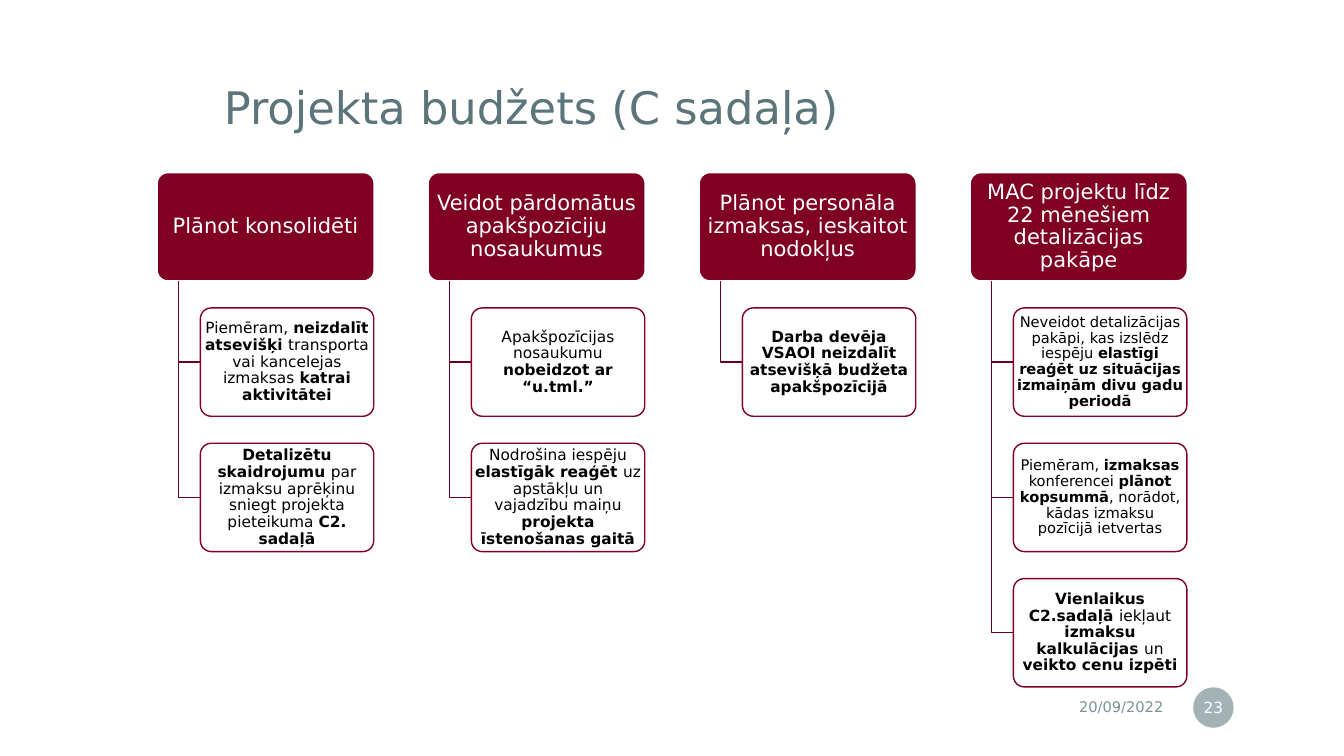
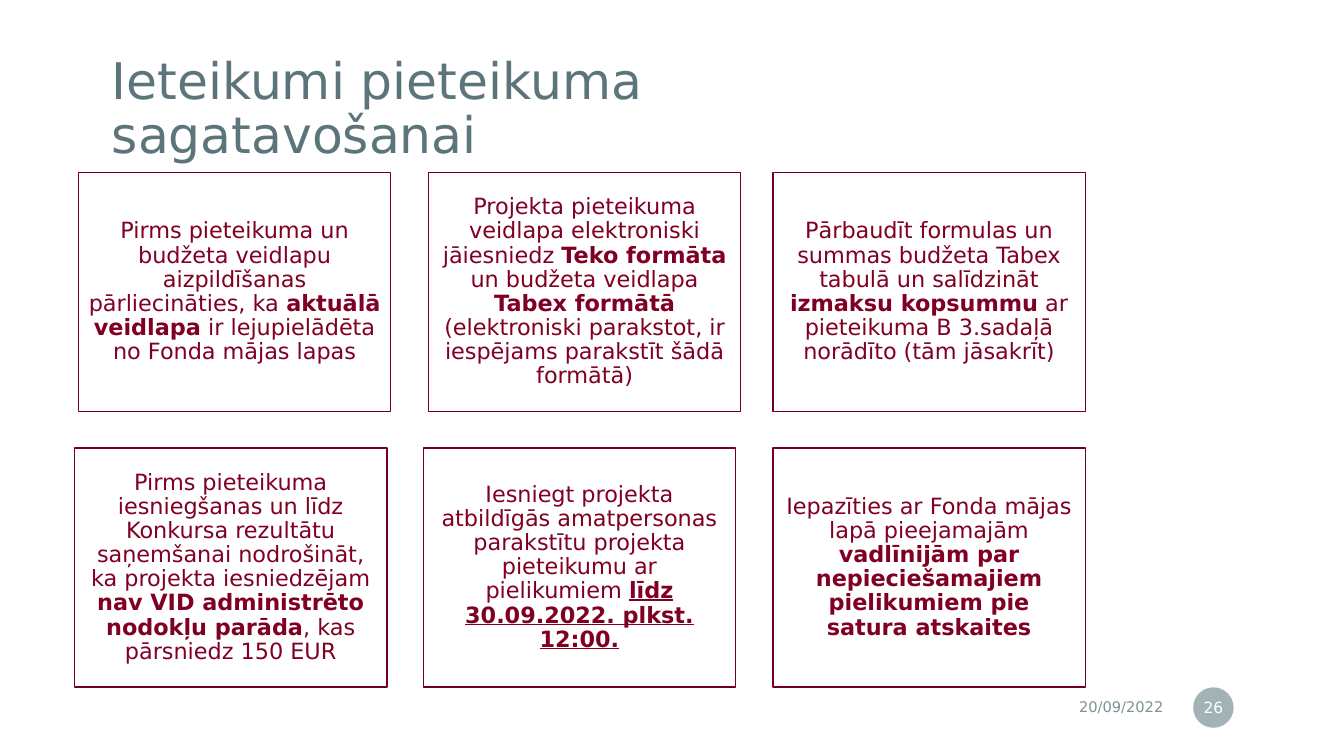
from pptx import Presentation
from pptx.dml.color import RGBColor
from pptx.enum.shapes import MSO_SHAPE as SHAPE
from pptx.enum.text import MSO_ANCHOR as ANCHOR, MSO_AUTO_SIZE, PP_ALIGN as ALIGN
from pptx.oxml.ns import qn
from pptx.util import Cm, Pt
from lxml import etree

FONT = "DejaVu Sans"
WHITE = RGBColor(0xFF, 0xFF, 0xFF)
BLACK = RGBColor(0, 0, 0)
MAROON = RGBColor(0x80, 0x00, 0x24)
CARD_LINE = RGBColor(0x74, 0x00, 0x21)
BRANCH = RGBColor(0x67, 0x00, 0x1D)
TITLE = RGBColor(0x5B, 0x75, 0x7A)
FOOTER = RGBColor(0x7C, 0x93, 0x96)

TOP = 4.35  # cm, first row on both slides

# Tree geometry, cm
TREE_LEFT, COLUMN_STEP, ROW_STEP = 3.96, 6.83, 3.41
NODE_H, HEAD_W, LEAF_W = 2.73, 5.47, 4.37
STEM_DX, LEAF_DX = 0.54, 1.09

# Card geometry, cm
CARD_W, CARD_H, CARD_ROW_STEP = 7.87, 6.02, 6.94

# Bold passages stand between ** marks; each leaf carries its text size.
BUDGET_TREE = [
    ("Plānot konsolidēti", [
        ("Piemēram, **neizdalīt atsevišķi **transporta vai kancelejas "
         "izmaksas **katrai aktivitātei**", 11),
        ("**Detalizētu skaidrojumu **par izmaksu aprēķinu sniegt projekta "
         "pieteikuma **C2. sadaļā**", 11),
    ]),
    ("Veidot pārdomātus apakšpozīciju nosaukumus", [
        ("Apakšpozīcijas nosaukumu **nobeidzot ar “u.tml.”**", 11),
        ("Nodrošina iespēju **elastīgāk reaģēt **uz apstākļu un vajadzību "
         "maiņu **projekta īstenošanas gaitā**", 11),
    ]),
    ("Plānot personāla izmaksas, ieskaitot nodokļus", [
        ("**Darba devēja VSAOI neizdalīt atsevišķā budžeta "
         "apakšpozīcijā**", 11),
    ]),
    ("MAC projektu līdz 22 mēnešiem detalizācijas pakāpe", [
        ("Neveidot detalizācijas pakāpi, kas izslēdz iespēju **elastīgi "
         "reaģēt uz situācijas izmaiņām divu gadu periodā**", 10.5),
        ("Piemēram, **izmaksas** konferencei **plānot kopsummā**, norādot, "
         "kādas izmaksu pozīcijā ietvertas", 10.5),
        ("**Vienlaikus C2.sadaļā **iekļaut **izmaksu kalkulācijas **un "
         "**veikto cenu izpēti**", 11),
    ]),
]

# Rows of (left in cm, text, underline the bold passage)
ADVICE_ROWS = [
    [
        (1.98, "Pirms pieteikuma un budžeta veidlapu aizpildīšanas "
         "pārliecināties, ka **aktuālā veidlapa** ir lejupielādēta no Fonda "
         "mājas lapas", False),
        (10.8, "Projekta pieteikuma veidlapa elektroniski jāiesniedz "
         "**Teko formāta **un budžeta veidlapa **Tabex formātā** "
         "(elektroniski parakstot, ir iespējams parakstīt šādā formātā)",
         False),
        (19.48, "Pārbaudīt formulas un summas budžeta Tabex tabulā un "
         "salīdzināt **izmaksu kopsummu** ar pieteikuma B 3.sadaļā norādīto "
         "(tām jāsakrīt)", False),
    ],
    [
        (1.88, "Pirms pieteikuma iesniegšanas un līdz Konkursa rezultātu "
         "saņemšanai nodrošināt, ka projekta iesniedzējam **nav VID "
         "administrēto nodokļu parāda**, kas pārsniedz 150 EUR", False),
        (10.67, "Iesniegt projekta atbildīgās amatpersonas parakstītu "
         "projekta pieteikumu ar pielikumiem **līdz\n30.09.2022. plkst.\n"
         "12:00.**", True),
        (19.48, "Iepazīties ar Fonda mājas lapā pieejamajām **vadlīnijām par "
         "nepieciešamajiem pielikumiem pie\nsatura atskaites**", False),
    ],
]


def write(shape, text, size, color, align=ALIGN.CENTER, spacing=0.9,
          margins=(0, 0), wrap=True, underline=False):
    """Fill a shape with one paragraph; ** toggles bold, \\n breaks a line."""
    tf = shape.text_frame
    tf.word_wrap = wrap
    tf.auto_size = MSO_AUTO_SIZE.NONE
    tf.vertical_anchor = ANCHOR.MIDDLE
    tf.margin_left = tf.margin_right = Cm(margins[0])
    tf.margin_top = tf.margin_bottom = Cm(margins[1])
    p = tf.paragraphs[0]
    p.alignment = align
    p.line_spacing = spacing
    p.font.name, p.font.size = FONT, Pt(size)
    p.font.color.rgb = color
    for i, part in enumerate(text.split("**")):
        for j, line in enumerate(part.split("\n")):
            if j:
                p.add_line_break()
            if line:
                r = p.add_run()
                r.text = line
                if i % 2:
                    r.font.bold = True
                    r.font.underline = underline or None


def add_box(s, kind, x, y, w, h, fill, line=None):
    sp = s.shapes.add_shape(kind, Cm(x), Cm(y), Cm(w), Cm(h))
    sp.shadow.inherit = False
    sp.fill.solid()
    sp.fill.fore_color.rgb = fill
    if line is None:
        sp.line.fill.background()
    else:
        sp.line.color.rgb = line
        sp.line.width = Pt(1)
    return sp


def add_node(s, x, y, w, fill, line):
    sp = add_box(s, SHAPE.ROUNDED_RECTANGLE, x, y, w, NODE_H, fill, line)
    sp.adjustments[0] = 0.1
    return sp


def add_branch(s, x, top, bottom, right):
    """Draw a line down from a heading and across to a leaf."""
    builder = s.shapes.build_freeform(Cm(x), Cm(top))
    builder.add_line_segments(
        [(Cm(x), Cm(bottom)), (Cm(right), Cm(bottom))], close=False)
    sp = builder.convert_to_shape()
    sp.shadow.inherit = False
    sp.fill.background()
    sp.line.color.rgb = BRANCH
    sp.line.width = Pt(1)


def add_footer(s, number):
    date = s.shapes.add_textbox(Cm(21.92), Cm(17.37), Cm(7.65), Cm(0.89))
    write(date, "20/09/2022", 10.5, FOOTER, ALIGN.RIGHT, 1, (0.25, 0.13))
    badge = add_box(s, SHAPE.OVAL, 30.07, 17.32, 1.02, 1.02, FOOTER)
    color = badge.fill._xPr.find(qn("a:solidFill"))[0]
    etree.SubElement(color, qn("a:alpha"), val="70000")
    write(badge, str(number), 11, WHITE, spacing=1, margins=(0.05, 0.13))


def add_slide(prs, title, number, size, align, side_margin, wrap):
    s = prs.slides.add_slide(prs.slide_layouts[5])
    t = s.shapes.title
    t.left, t.top, t.width, t.height = Cm(2.31), Cm(1.22), Cm(22.17), Cm(3.12)
    write(t, title, size, TITLE, align, margins=(side_margin, 0.51), wrap=wrap)
    add_footer(s, number)
    return s


def add_tree_column(s, x, heading, leaves):
    head = add_node(s, x, TOP, HEAD_W, MAROON, WHITE)
    write(head, heading, 15, WHITE, margins=(0.08, 0.05))
    for row, (text, size) in enumerate(leaves, 1):
        y = TOP + row * ROW_STEP
        add_branch(s, x + STEM_DX, TOP + NODE_H, y + NODE_H / 2, x + LEAF_DX)
        leaf = add_node(s, x + LEAF_DX, y, LEAF_W, WHITE, MAROON)
        write(leaf, text, size, BLACK)


def add_budget_slide(prs):
    s = add_slide(prs, "Projekta budžets (C sadaļa)", 23, 32,
                  ALIGN.CENTER, 0, False)
    for col, (heading, leaves) in enumerate(BUDGET_TREE):
        add_tree_column(s, TREE_LEFT + col * COLUMN_STEP, heading, leaves)


def add_advice_slide(prs):
    s = add_slide(prs, "Ieteikumi pieteikuma sagatavošanai", 26, 36,
                  ALIGN.LEFT, 0.51, True)
    for row, cards in enumerate(ADVICE_ROWS):
        for x, text, underline in cards:
            card = add_box(s, SHAPE.RECTANGLE, x, TOP + row * CARD_ROW_STEP,
                           CARD_W, CARD_H, WHITE, CARD_LINE)
            write(card, text, 16, MAROON, margins=(0.18, 0.18),
                  underline=underline)


def main():
    prs = Presentation()
    prs.slide_width, prs.slide_height = Cm(33.87), Cm(19.05)
    add_budget_slide(prs)
    add_advice_slide(prs)
    prs.save("out.pptx")


if __name__ == "__main__":
    main()
